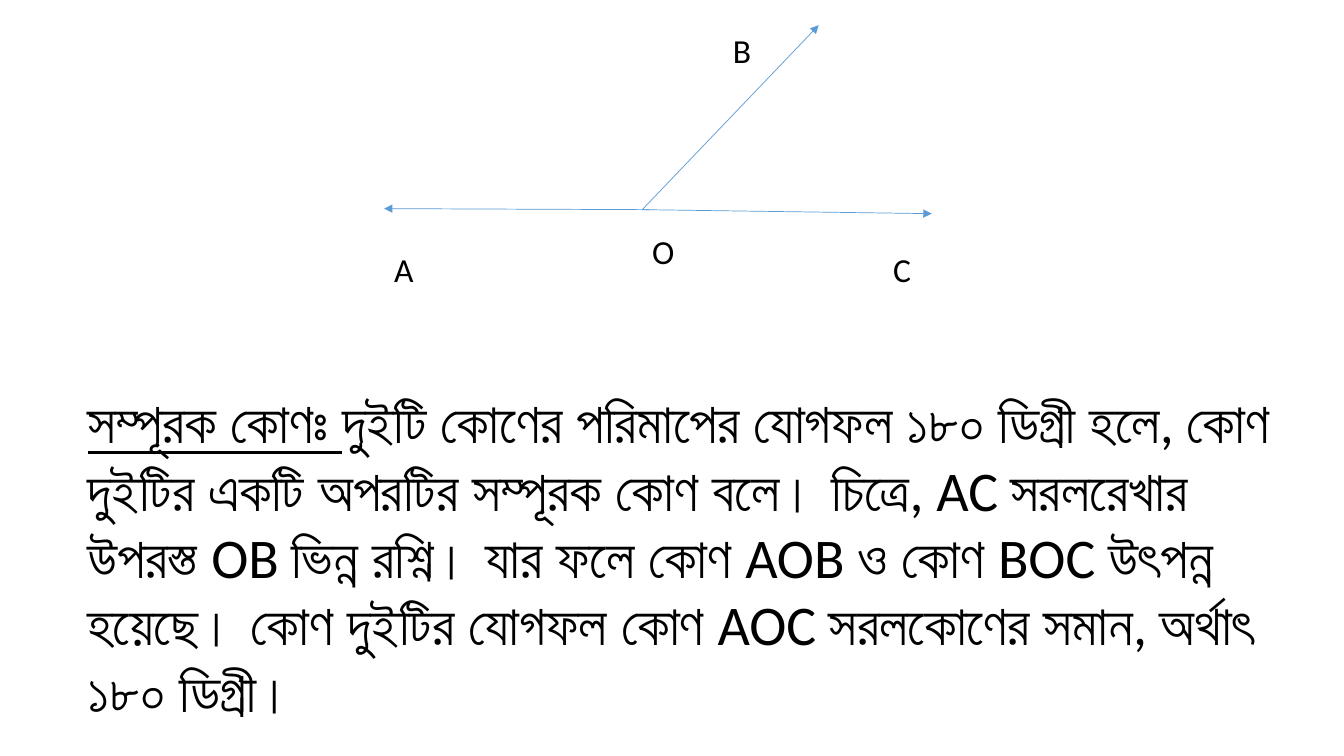
from dataclasses import dataclass

from lxml.etree import SubElement
from pptx import Presentation
from pptx.dml.color import RGBColor
from pptx.enum.shapes import MSO_CONNECTOR as Connector
from pptx.enum.text import MSO_AUTO_SIZE as AutoSize
from pptx.oxml.ns import qn
from pptx.util import Inches, Pt


@dataclass(frozen=True)
class Theme:
    font: str = "Calibri"
    ink: RGBColor = RGBColor(0x00, 0x00, 0x00)
    ray: RGBColor = RGBColor(0x5B, 0x9B, 0xD5)
    body_size: int = 40
    label_size: int = 24
    ray_width: float = 0.5


class AngleSlide:
    def __init__(self, deck, theme):
        self.theme = theme
        self.slide = deck.slides.add_slide(deck.slide_layouts[6])

    def text(self, left, top, width, height, parts, size):
        """Add one paragraph made of (wording, underlined) parts."""
        box = self.slide.shapes.add_textbox(
            Inches(left), Inches(top), Inches(width), Inches(height))
        frame = box.text_frame
        frame.word_wrap = True
        frame.auto_size = AutoSize.SHAPE_TO_FIT_TEXT
        for wording, underlined in parts:
            run = frame.paragraphs[0].add_run()
            run.text = wording
            run.font.name = self.theme.font
            run.font.size = Pt(size)
            run.font.color.rgb = self.theme.ink
            run.font.underline = underlined

    def label(self, letter, left, top, width):
        self.text(left, top, width, 0.5, [(letter, False)], self.theme.label_size)

    def ray(self, start, end):
        arrow = self.slide.shapes.add_connector(
            Connector.STRAIGHT, *map(Inches, start + end))
        arrow.line.color.rgb = self.theme.ray
        arrow.line.width = Pt(self.theme.ray_width)
        SubElement(arrow.line._get_or_add_ln(), qn("a:tailEnd"), type="triangle")
        SubElement(arrow._element.spPr, qn("a:effectLst"))


def main():
    deck = Presentation()
    deck.slide_width, deck.slide_height = Inches(13.33), Inches(7.5)
    theme = Theme()
    page = AngleSlide(deck, theme)

    # Definition of supplementary angles
    term = "সম্পূরক কোণঃ "
    definition = (
        "দুইটি কোণের পরিমাপের যোগফল ১৮০ ডিগ্রী হলে, কোণ দুইটির একটি অপরটির "
        "সম্পূরক কোণ বলে। চিত্রে, AC সরলরেখার উপরস্ত OB ভিন্ন রশ্নি। যার ফলে "
        "কোণ AOB ও কোণ BOC উৎপন্ন হয়েছে। কোণ দুইটির যোগফল কোণ AOC "
        "সরলকোণের সমান, অর্থাৎ ১৮০ ডিগ্রী।")
    page.text(0.77, 3.8, 12.07, 3.47,
              [(term, True), (definition, False)], theme.body_size)

    # Rays towards C, A and B
    vertex = (6.37, 2.08)
    page.ray(vertex, (9.24, 2.12))
    page.ray((6.44, 2.08), (3.81, 2.07))
    page.ray(vertex, (8.12, 0.25))

    # Point labels
    for letter, left, top, width in (
            ("A", 3.81, 2.42, 1.07), ("O", 6.37, 2.24, 0.59),
            ("C", 8.76, 2.42, 0.64), ("B", 7.17, 0.25, 0.58)):
        page.label(letter, left, top, width)

    deck.save("out.pptx")


if __name__ == "__main__":
    main()
